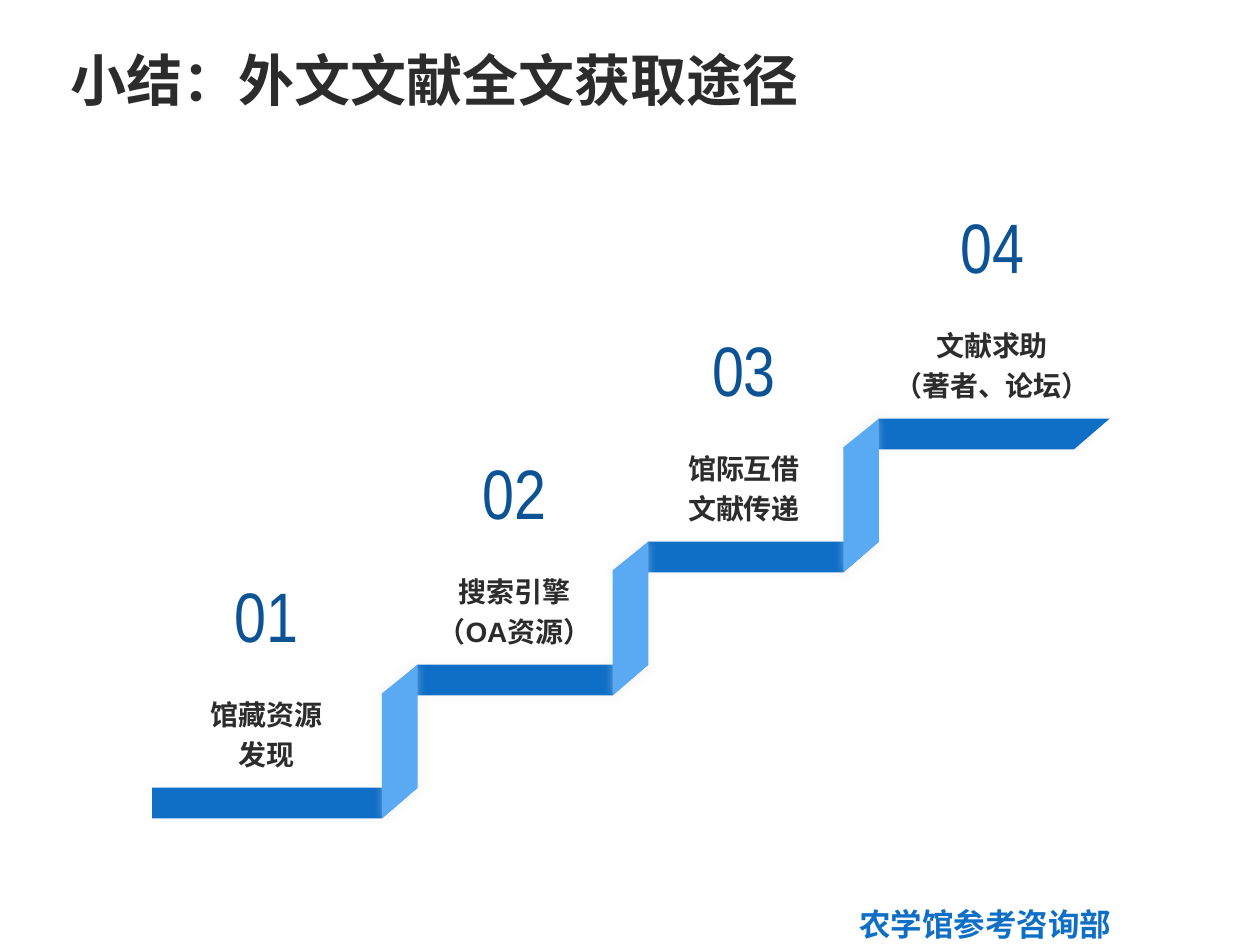
import pptx
import pptx.util
import pptx.dml.color
import pptx.enum.text
import pptx.oxml
import pptx.oxml.ns

Cm = pptx.util.Cm
ALIGN = pptx.enum.text.PP_ALIGN
ANCHOR = pptx.enum.text.MSO_ANCHOR

# Text formats
HEAD = {"size": 32, "name": "Arial", "bold": True, "color": "2C2C2C"}
LABEL = {"size": 16, "name": "Arial", "bold": True, "color": "2C2C2C"}
COUNT = {"size": 40, "name": "Arial Narrow", "bold": False, "color": "0B5394"}
FOOT = {"size": 18, "name": "Karla", "bold": True, "color": "0F6FC6"}

# Stairs: run and rise of one step, slant and depth of the ribbon (cm)
RUN, RISE = 4.65, 2.48
SLANT, DEPTH = 0.72, 0.62
LEFT, BASE, EDGE = 3.07, 15.88, 7.7
DARK, LIGHT = "0F6FC6", "59AAF2"

# Centre, label width and label lines of each step
STEPS = [
    (5.38, 3.86, ["馆藏资源", "发现"]),
    (10.37, 3.86, ["搜索引擎", "（OA资源）"]),
    (15.0, 3.86, ["馆际互借", "文献传递"]),
    (20.0, 4.57, ["文献求助", "（著者、论坛）"]),
]


def tint(code):
    return pptx.dml.color.RGBColor.from_string(code)


def style(font, form):
    for key, val in form.items():
        if key == "color":
            font.color.rgb = tint(val)
        else:
            setattr(font, key, pptx.util.Pt(val) if key == "size" else val)


def write(frame, lines, form, align, space=None):
    for num, line in enumerate(lines):
        para = frame.add_paragraph() if num else frame.paragraphs[0]
        para.alignment = align
        para.line_spacing = space
        run = para.add_run()
        run.text = line
        style(run.font, form)


def add_box(slide, left, top, width, height, **frame_set):
    box = slide.shapes.add_textbox(Cm(left), Cm(top), Cm(width), Cm(height))
    frame = box.text_frame
    for key, val in {"word_wrap": True, **frame_set}.items():
        setattr(frame, key, val)
    return frame


def add_glow(shape):
    props = shape.fill._xPr
    props.append(pptx.oxml.parse_xml(
        f'<a:effectLst {pptx.oxml.ns.nsdecls("a")}>'
        '<a:outerShdw blurRad="63500" algn="ctr" rotWithShape="0">'
        '<a:srgbClr val="ECECEC"><a:alpha val="40000"/></a:srgbClr>'
        '</a:outerShdw></a:effectLst>'))


def add_band(slide, points, code):
    spots = [(Cm(x), Cm(y)) for x, y in points]
    build = slide.shapes.build_freeform(*spots[0])
    build.add_line_segments(spots[1:], close=True)
    band = build.convert_to_shape()
    band.fill.solid()
    band.fill.fore_color.rgb = tint(code)
    band.line.fill.background()
    add_glow(band)


def add_stairs(slide):
    # Treads: the first has a square left end
    for step in range(len(STEPS)):
        top = BASE - RISE * step
        low = top + DEPTH
        end = EDGE + RUN * step
        start = end - RUN
        head = [(start, low), (start + SLANT, top)] if step else [
            (LEFT, low), (LEFT, top)]
        add_band(slide, head + [(end + SLANT, top), (end, low)], DARK)
    # Risers between the treads
    for step in range(1, len(STEPS)):
        top = BASE - RISE * step
        near = EDGE + RUN * (step - 1)
        far = near + SLANT
        add_band(slide, [(near, top + RISE + DEPTH), (far, top + RISE),
                         (far, top), (near, top + 0.58)], LIGHT)


def add_step(slide, step, mid, width, lines):
    frame = add_box(slide, mid - width / 2, 13.0 - RISE * step, width, 2.67,
                    vertical_anchor=ANCHOR.BOTTOM)
    write(frame, lines, LABEL, ALIGN.CENTER, 1.2)
    frame = add_box(slide, mid - 1.65, 11.71 - RISE * step, 3.3, 1.22,
                    vertical_anchor=ANCHOR.MIDDLE, margin_left=0,
                    margin_right=0, margin_bottom=0)
    write(frame, [f"{step + 1:02}"], COUNT, ALIGN.CENTER)


def add_title(slide, text):
    title = slide.shapes.title
    place = {"left": 1.17, "top": 0.46, "width": 23.04, "height": 1.96}
    for key, val in place.items():
        setattr(title, key, Cm(val))
    title.text_frame.vertical_anchor = ANCHOR.BOTTOM
    write(title.text_frame, [text], HEAD, ALIGN.LEFT, 0.9)


def main():
    deck = pptx.Presentation()
    deck.slide_width, deck.slide_height = Cm(25.4), Cm(19.05)
    slide = deck.slides.add_slide(deck.slide_layouts[5])
    add_title(slide, "小结：外文文献全文获取途径")
    # Department name at the foot
    frame = add_box(slide, 17.07, 18.11, 5.64, 1.02, word_wrap=False)
    write(frame, ["农学馆参考咨询部"], FOOT, ALIGN.LEFT)
    add_stairs(slide)
    for step, item in enumerate(STEPS):
        add_step(slide, step, *item)
    deck.save("out.pptx")


if __name__ == "__main__":
    main()
